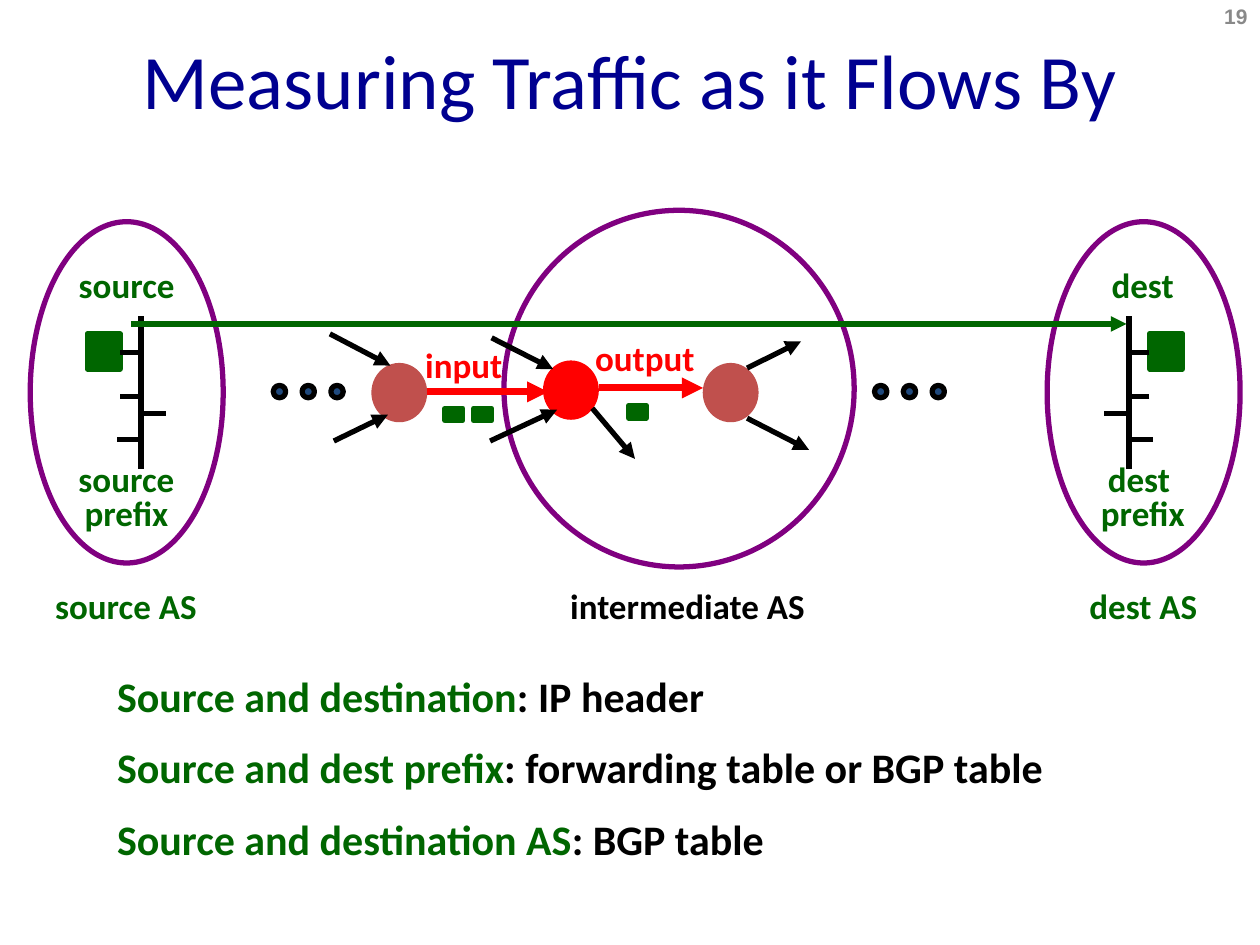
"""Build the slide about measuring traffic between autonomous systems."""
from lxml import etree
from pptx import Presentation
from pptx.dml.color import RGBColor
from pptx.enum.shapes import MSO_CONNECTOR, MSO_SHAPE
from pptx.enum.text import MSO_ANCHOR, MSO_AUTO_SIZE, PP_ALIGN
from pptx.oxml.ns import qn
from pptx.util import Cm, Pt

OVAL, RECTANGLE = MSO_SHAPE.OVAL, MSO_SHAPE.RECTANGLE
STRAIGHT = MSO_CONNECTOR.STRAIGHT
LEFT, CENTER, RIGHT = PP_ALIGN.LEFT, PP_ALIGN.CENTER, PP_ALIGN.RIGHT
TOP, MIDDLE = MSO_ANCHOR.TOP, MSO_ANCHOR.MIDDLE
NO_FIT, FIT_SHAPE = MSO_AUTO_SIZE.NONE, MSO_AUTO_SIZE.SHAPE_TO_FIT_TEXT
COLORS = {
    "title": "000090", "green": "006600", "red": "FF0000", "black": "000000",
    "router": "C0504D", "purple": "800080", "dot": "1F497D", "gray": "898989",
}

deck = Presentation()
deck.slide_width, deck.slide_height = Cm(25.4), Cm(19.05)
page = deck.slides.add_slide(deck.slide_layouts[6])


def add_text(paragraphs, left, top, width, height, *, size=20, bold=True,
             font="Calibri", align=CENTER, anchor=TOP, wrap=False, spacing=None, after=None):
    box = page.shapes.add_textbox(Cm(left), Cm(top), Cm(width), Cm(height))
    frame = box.text_frame
    frame.word_wrap = wrap
    frame.auto_size = NO_FIT if wrap else FIT_SHAPE
    frame.vertical_anchor = anchor
    for index, spans in enumerate(paragraphs):
        para = frame.add_paragraph() if index else frame.paragraphs[0]
        para.alignment = align
        para.line_spacing = spacing
        para.space_after = after
        for text, color in spans:
            span = para.add_run()
            span.text = text
            span.font.name, span.font.size, span.font.bold = font, Pt(size), bold
            span.font.color.rgb = RGBColor.from_string(COLORS[color])


def add_line(x1, y1, x2, y2, color="black", weight=3, arrow=False):
    line = page.shapes.add_connector(STRAIGHT, Cm(x1), Cm(y1), Cm(x2), Cm(y2))
    line.line.color.rgb = RGBColor.from_string(COLORS[color])
    line.line.width = Pt(weight)
    if arrow:
        etree.SubElement(line.line._get_or_add_ln(), qn("a:tailEnd"), type="triangle")
    etree.SubElement(line._element.spPr, qn("a:effectLst"))


add_text([[("Measuring Traffic as it Flows By", "title")]], 1.27, 0, 22.86, 3.18,
         size=44, bold=False, anchor=MIDDLE, wrap=True)
add_text([[("19", "gray")]], 19.48, -0.18, 5.92, 1.02,
         size=12, font="Arial", align=RIGHT, anchor=MIDDLE, wrap=True)

trunks = [(2.84, 1), (22.76, -1)]
shapes = [
    (OVAL, 11, 7.32, 1.02, 1.09, "red", "red"),
    (OVAL, 14.22, 7.37, 1.02, 1.09, "router", "router"),
    (OVAL, 7.54, 7.37, 1.02, 1.09, "router", "router"),
    (OVAL, 10.16, 4.24, 7.06, 7.19, None, "purple"),
    (OVAL, 0.61, 4.47, 3.89, 6.88, None, "purple"),
    (OVAL, 21.11, 4.47, 3.89, 6.88, None, "purple"),
]
shapes += [(OVAL, start + 0.58 * step, 7.77, 0.25, 0.25, "dot", "black")
           for start in (5.51, 17.63) for step in range(3)]
shapes += [(RECTANGLE, x - 0.75 * side - 0.33, 6.73, 0.66, 0.71, "green", "green")
           for x, side in trunks]
shapes += [(RECTANGLE, x, y, 0.36, 0.25, "green", "green")
           for x, y in ((8.97, 8.23), (9.55, 8.23), (12.67, 8.18))]
for kind, left, top, width, height, fill, outline in shapes:
    shape = page.shapes.add_shape(kind, Cm(left), Cm(top), Cm(width), Cm(height))
    shape.shadow.inherit = False
    if fill:
        shape.fill.solid()
        shape.fill.fore_color.rgb = RGBColor.from_string(COLORS[fill])
    else:
        shape.fill.background()
    shape.line.color.rgb = RGBColor.from_string(COLORS[outline])
    shape.line.width = Pt(3)

for ends in [
    (15.06, 7.42, 16.15, 6.88), (15.06, 8.43, 16.31, 9.07),
    (9.91, 6.81, 11.15, 7.44), (9.88, 8.89, 11.23, 8.26),
    (11.94, 8.23, 12.8, 9.25), (6.73, 8.89, 7.82, 8.36),
    (6.65, 6.73, 7.87, 7.37),
]:
    add_line(*ends, arrow=True)
add_line(8.61, 7.9, 11.05, 7.9, color="red", weight=4, arrow=True)
add_line(12.07, 7.82, 14.17, 7.82, color="red", weight=4, arrow=True)

rungs = [(7.11, -0.41, 0.05), (8, -0.41, 0.05), (8.86, -0.48, -0.03), (8.33, 0.05, 0.51)]
for x, side in trunks:
    add_line(x, 9.45, x, 6.38)
    for y, start, end in rungs:
        add_line(x + side * start, y, x + side * end, y)
add_line(2.64, 6.53, 22.71, 6.53, color="green", arrow=True)

for text, color, left, top, width in [
    ("input", "red", 8.31, 6.81, 2.08),
    ("output", "red", 11.73, 6.65, 2.54),
    ("source", "green", 1.27, 5.18, 2.57),
    ("dest", "green", 22.12, 5.18, 1.83),
    ("source AS", "green", 0.84, 11.66, 3.4),
    ("intermediate AS", "black", 11.13, 11.66, 5.46),
    ("dest AS", "green", 21.69, 11.66, 2.72),
]:
    add_text([[(text, color)]], left, top, width, 1.09)
for text, left, width in [("source ", 1.32, 2.46), ("dest ", 21.92, 2.24)]:
    add_text([[(text, "green")], [("prefix", "green")]], left, 9.27, width, 1.65, spacing=0.8)

facts = [
    ("Source and destination", ": IP header"),
    ("Source and dest prefix", ": forwarding table or BGP table"),
    ("Source and destination AS", ": BGP table"),
]
add_text([[(term, "green"), (place, "black")] for term, place in facts],
         2.11, 13.39, 19.35, 4.19, size=24, align=LEFT, after=Pt(12))

deck.save("out.pptx")
